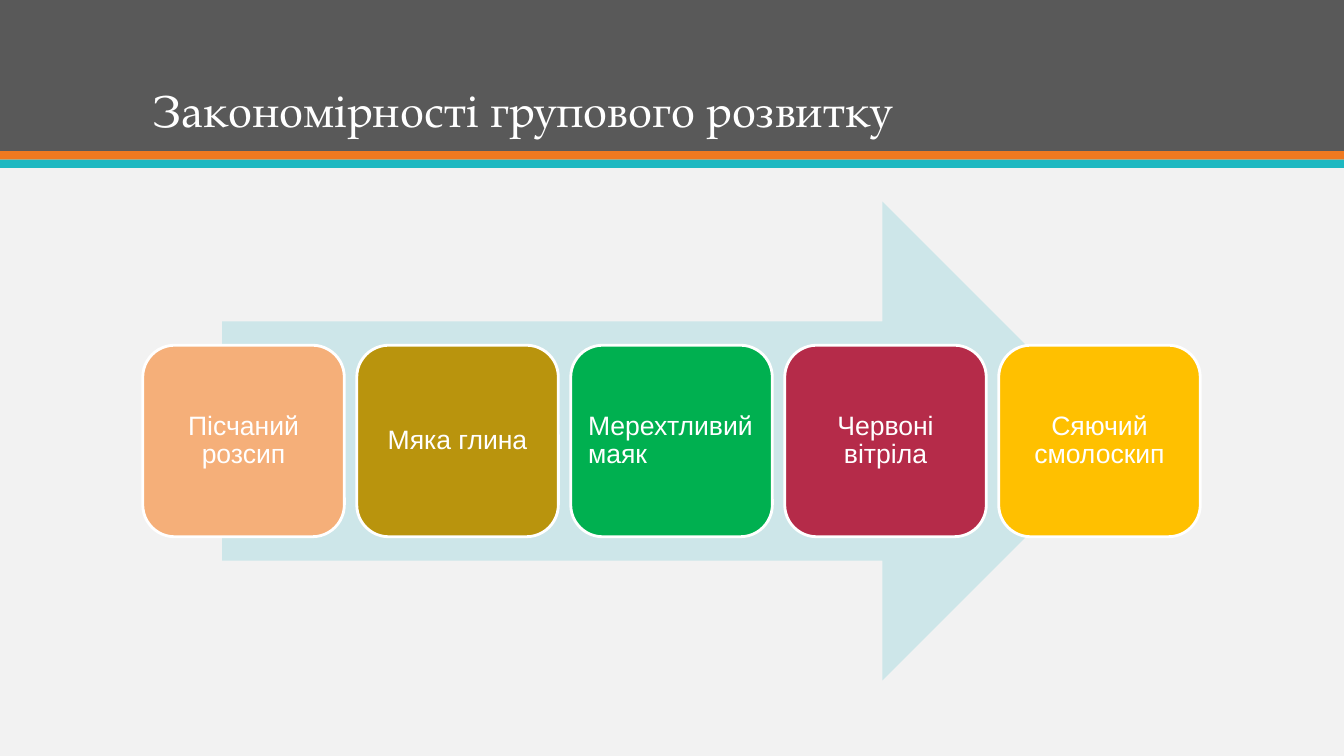
from dataclasses import dataclass

from pptx import Presentation
from pptx.dml.color import RGBColor
from pptx.enum.shapes import MSO_SHAPE as Preset
from pptx.enum.text import MSO_ANCHOR as Anchor, PP_ALIGN as Align
from pptx.shapes.autoshape import Shape
from pptx.slide import Slide
from pptx.text.text import TextFrame
from pptx.util import Pt

SLIDE_W, SLIDE_H = 960, 540
WHITE = "FFFFFF"
STAGE_LEFT, STAGE_TOP, STAGE_STEP = 102, 246.6, 152.85
STAGE_W, STAGE_H = 144, 136.8


@dataclass
class Band:
    top: float
    height: float
    color: str


@dataclass
class Stage:
    name: str
    color: str
    align: Align = Align.CENTER


BANDS = [Band(0, 108, "595959"), Band(108, 6, "EF7920"), Band(114, 6, "1EB8C1")]

STAGES = [
    Stage("Пісчаний розсип", "F5AF79"),
    Stage("Мяка глина", "B9940D"),
    Stage("Мерехтливий маяк", "00B050", Align.JUSTIFY),
    Stage("Червоні вітріла", "B52B49"),
    Stage("Сяючий смолоскип", "FFC000"),
]


def rgb(color: str) -> RGBColor:
    return RGBColor.from_string(color)


def add_filled(slide: Slide, preset: Preset, left: float, top: float,
               width: float, height: float, color: str) -> Shape:
    shape = slide.shapes.add_shape(preset, Pt(left), Pt(top), Pt(width), Pt(height))
    shape.shadow.inherit = False
    shape.fill.solid()
    shape.fill.fore_color.rgb = rgb(color)
    shape.line.fill.background()
    return shape


def write(frame: TextFrame, text: str, font: str, size: float, align: Align,
          anchor: Anchor, inset_x: float, inset_y: float) -> None:
    frame.word_wrap = True
    frame.vertical_anchor = anchor
    frame.margin_left = frame.margin_right = Pt(inset_x)
    frame.margin_top = frame.margin_bottom = Pt(inset_y)
    paragraph = frame.paragraphs[0]
    paragraph.text = text
    paragraph.alignment = align
    paragraph.line_spacing = 0.9
    paragraph.font.name = font
    paragraph.font.size = Pt(size)
    paragraph.font.color.rgb = rgb(WHITE)


def add_stage(slide: Slide, index: int, stage: Stage) -> None:
    card = add_filled(slide, Preset.ROUNDED_RECTANGLE, STAGE_LEFT + index * STAGE_STEP,
                      STAGE_TOP, STAGE_W, STAGE_H, stage.color)
    card.line.color.rgb = rgb(WHITE)
    card.line.width = Pt(2)
    write(card.text_frame, stage.name, "Arial", 19, stage.align, Anchor.MIDDLE, 5.7, 5.7)


def main() -> None:
    deck = Presentation()
    deck.slide_width, deck.slide_height = Pt(SLIDE_W), Pt(SLIDE_H)
    slide = deck.slides.add_slide(deck.slide_layouts[6])
    slide.background.fill.solid()
    slide.background.fill.fore_color.rgb = rgb("F2F2F2")

    # Header bands and title
    for band in BANDS:
        add_filled(slide, Preset.RECTANGLE, 0, band.top, SLIDE_W, band.height, band.color)
    title = slide.shapes.add_textbox(Pt(102), Pt(20.4), Pt(756), Pt(81))
    write(title.text_frame, "Закономірності групового розвитку", "TeX Gyre Pagella",
          32, Align.LEFT, Anchor.BOTTOM, 7.2, 3.6)

    # Arrow of development with its stages
    add_filled(slide, Preset.RIGHT_ARROW, 158.7, 144, 642.6, 342, "CDE6E9")
    for index, stage in enumerate(STAGES):
        add_stage(slide, index, stage)

    deck.save("out.pptx")


if __name__ == "__main__":
    main()
